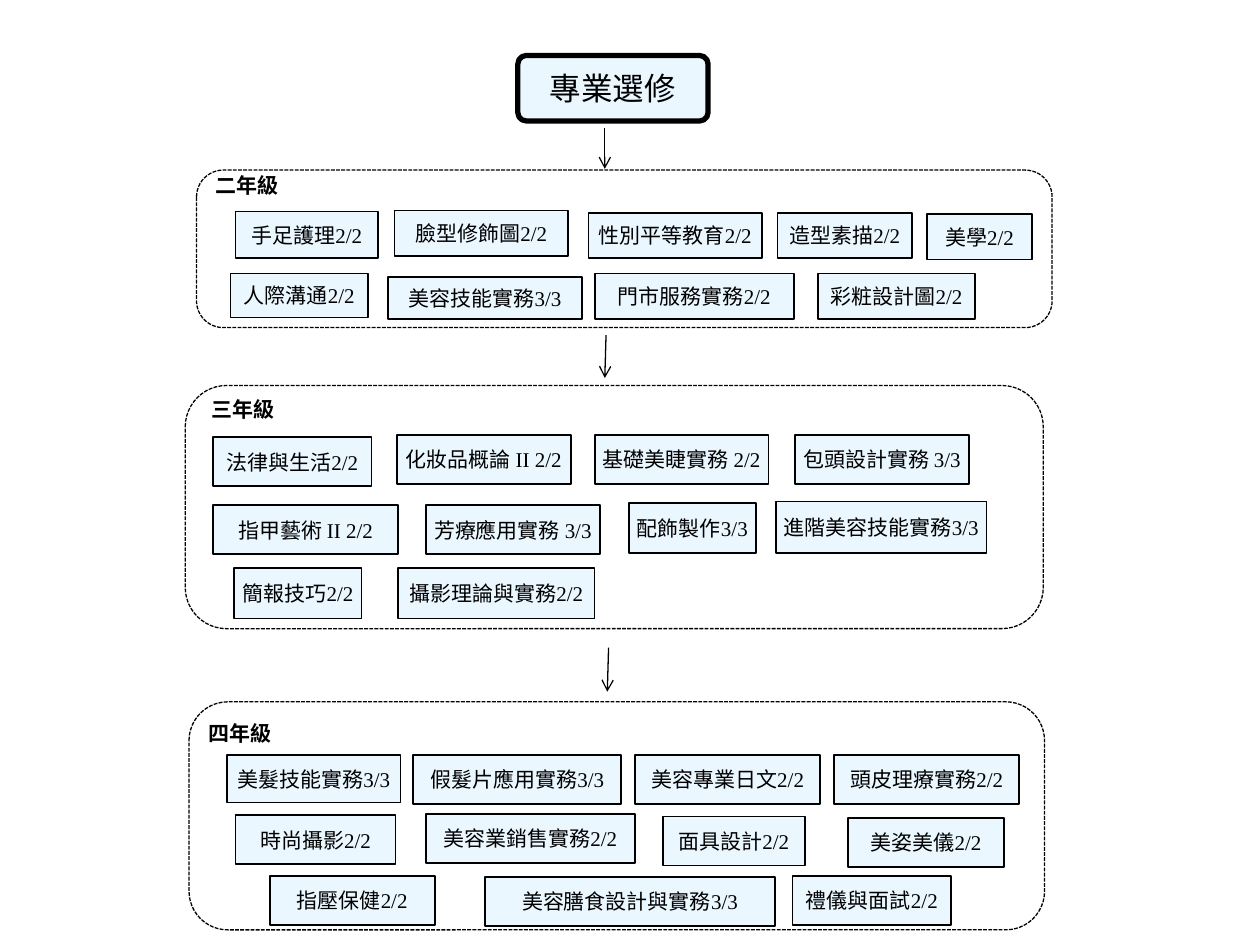
"""Build the flow chart of professional electives by school year."""
from pptx import Presentation
from pptx.dml.color import RGBColor
from pptx.enum.dml import MSO_LINE
from pptx.enum.shapes import MSO_CONNECTOR, MSO_SHAPE
from pptx.enum.text import MSO_ANCHOR, PP_ALIGN
from pptx.oxml.ns import qn
from pptx.util import Inches, Pt
from lxml.etree import SubElement

COLORS = {"ink": "000000", "course": "EBF7FF", "panel": "FFFFFF"}
FONT = "Times New Roman"

YEARS = [
    ("二年級", (1.61, 1.32, 1.01), (1.56, 1.35, 6.79, 1.25), [
        ("手足護理2/2", 1.87, 1.68, 1.13, 0.37),
        ("臉型修飾圖2/2", 3.13, 1.67, 1.38, 0.36),
        ("性別平等教育2/2", 4.67, 1.69, 1.38, 0.36),
        ("造型素描2/2", 6.17, 1.69, 1.07, 0.36),
        ("美學2/2", 7.36, 1.7, 0.83, 0.36),
        ("人際溝通2/2", 1.83, 2.17, 1.09, 0.35),
        ("美容技能實務3/3", 3.08, 2.2, 1.54, 0.33),
        ("門市服務實務2/2", 4.72, 2.17, 1.58, 0.36),
        ("彩粧設計圖2/2", 6.49, 2.17, 1.25, 0.36),
    ]),
    ("三年級", (1.58, 3.1, 1.65), (1.47, 3.06, 6.81, 1.93), [
        ("法律與生活2/2", 1.69, 3.47, 1.26, 0.39),
        ("化妝品概論 II 2/2", 3.15, 3.45, 1.38, 0.39),
        ("基礎美睫實務 2/2", 4.72, 3.45, 1.38, 0.39),
        ("包頭設計實務 3/3", 6.31, 3.45, 1.38, 0.39),
        ("指甲藝術 II 2/2", 1.69, 4.01, 1.47, 0.39),
        ("芳療應用實務 3/3", 3.38, 4.01, 1.38, 0.39),
        ("配飾製作3/3", 4.99, 3.99, 1.01, 0.4),
        ("進階美容技能實務3/3", 6.16, 3.98, 1.67, 0.41),
        ("簡報技巧2/2", 1.86, 4.51, 1.01, 0.4),
        ("攝影理論與實務2/2", 3.16, 4.51, 1.56, 0.4),
    ]),
    ("四年級", (1.56, 5.67, 1.28), (1.5, 5.57, 6.79, 1.81), [
        ("美髮技能實務3/3", 1.8, 5.99, 1.38, 0.38),
        ("假髮片應用實務3/3", 3.28, 5.99, 1.65, 0.39),
        ("美容專業日文2/2", 5.04, 5.99, 1.47, 0.39),
        ("頭皮理療實務2/2", 6.62, 5.99, 1.47, 0.39),
        ("時尚攝影2/2", 1.87, 6.47, 1.27, 0.39),
        ("美容業銷售實務2/2", 3.38, 6.46, 1.66, 0.39),
        ("面具設計2/2", 5.26, 6.48, 1.13, 0.39),
        ("美姿美儀2/2", 6.73, 6.49, 1.24, 0.39),
        ("指壓保健2/2", 2.14, 6.95, 1.31, 0.39),
        ("美容膳食設計與實務3/3", 3.85, 6.96, 2.3, 0.39),
        ("禮儀與面試2/2", 6.29, 6.95, 1.26, 0.39),
    ]),
]
ARROWS = [(4.8, 1.02, 4.8, 1.34), (4.81, 2.66, 4.8, 3), (4.83, 5.14, 4.82, 5.49)]

presentation = Presentation()
presentation.slide_width = Inches(10)
presentation.slide_height = Inches(7.5)
slide = presentation.slides.add_slide(presentation.slide_layouts[6])


def add_box(preset, bounds, fill, line_width):
    shape = slide.shapes.add_shape(preset, *map(Inches, bounds))
    shape.shadow.inherit = False
    shape.fill.solid()
    shape.fill.fore_color.rgb = RGBColor.from_string(COLORS[fill])
    shape.line.color.rgb = RGBColor.from_string(COLORS["ink"])
    shape.line.width = Pt(line_width)
    return shape


def write_text(shape, text, size, alignment):
    paragraph = shape.text_frame.paragraphs[0]
    paragraph.text = text
    paragraph.alignment = alignment
    paragraph.font.name = FONT
    paragraph.font.size = Pt(size)
    paragraph.font.color.rgb = RGBColor.from_string(COLORS["ink"])
    return paragraph


title = add_box(MSO_SHAPE.ROUNDED_RECTANGLE, (4.11, 0.44, 1.51, 0.52), "course", 3)
title.adjustments[0] = 0.13
title.text_frame.word_wrap = False
title.text_frame.vertical_anchor = MSO_ANCHOR.MIDDLE
write_text(title, "專業選修", 18, PP_ALIGN.CENTER)

for year, (left, top, width), panel_bounds, courses in YEARS:
    panel = add_box(MSO_SHAPE.ROUNDED_RECTANGLE, panel_bounds, "panel", 0.75)
    panel.adjustments[0] = 0.17
    panel.line.dash_style = MSO_LINE.SQUARE_DOT

    label = slide.shapes.add_textbox(*map(Inches, (left, top, width, 0.3)))
    label.text_frame.word_wrap = True
    heading = write_text(label, year, 12, PP_ALIGN.LEFT)
    heading.font.bold = True
    heading.space_before = Pt(8)

    for name, *bounds in courses:
        course = add_box(MSO_SHAPE.RECTANGLE, bounds, "course", 1)
        frame = course.text_frame
        frame.margin_left = frame.margin_right = 0
        frame.margin_top = frame.margin_bottom = Inches(0.02)
        frame.vertical_anchor = MSO_ANCHOR.MIDDLE
        write_text(course, name, 12, PP_ALIGN.CENTER)

for ends in ARROWS:
    arrow = slide.shapes.add_connector(MSO_CONNECTOR.STRAIGHT, *map(Inches, ends))
    arrow.line.color.rgb = RGBColor.from_string(COLORS["ink"])
    arrow.line.width = Pt(0.75)
    SubElement(arrow.line._get_or_add_ln(), qn("a:tailEnd"), type="arrow")
    SubElement(arrow._element.spPr, qn("a:effectLst"))

presentation.save("out.pptx")
